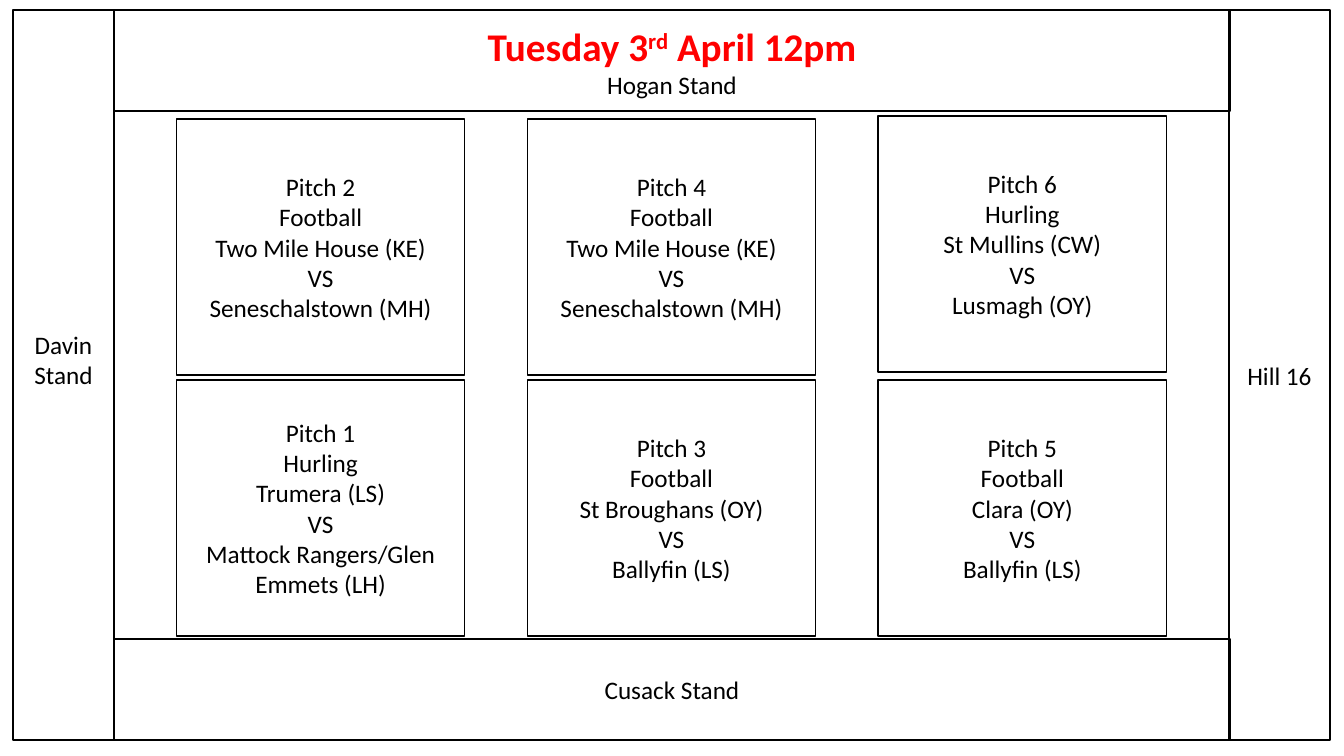
"""Build the pitch plan slide for the Tuesday fixtures."""
import pptx
import pptx.dml.color
import pptx.enum.shapes
import pptx.enum.text
import pptx.util

PX = 9144
COLOURS = {"ink": "000000", "date": "FF0000"}
PITCHES = [
    [
        ["Pitch 2", "Football", "Two Mile House (KE)", "VS", "Seneschalstown (MH)"],
        ["Pitch 4", "Football", "Two Mile House (KE)", "VS", "Seneschalstown (MH)"],
        ["Pitch 6", "Hurling", "St Mullins (CW)", "VS", "Lusmagh (OY)"],
    ],
    [
        ["Pitch 1", "Hurling", "Trumera (LS)", "VS", "Mattock Rangers/Glen Emmets (LH)"],
        ["Pitch 3", "Football", "St Broughans (OY)", "VS", "Ballyfin (LS)"],
        ["Pitch 5", "Football", "Clara (OY)", "VS", "Ballyfin (LS)"],
    ],
]
PITCH_TOPS = [[118, 118, 115], [377, 377, 377]]


class PitchPlan:
    def __init__(self, slide):
        self.slide = slide
        self.font_name = "Calibri"

    def colour(self, name):
        return pptx.dml.color.RGBColor.from_string(COLOURS[name])

    def outline(self, shape):
        shape.fill.background()
        shape.line.color.rgb = self.colour("ink")
        shape.line.width = pptx.util.Pt(1)

    def format_paragraph(self, paragraph, size=18, colour="ink", bold=False):
        paragraph.alignment = pptx.enum.text.PP_ALIGN.CENTER
        paragraph.font.name = self.font_name
        paragraph.font.size = pptx.util.Pt(size)
        paragraph.font.bold = bold
        paragraph.font.color.rgb = self.colour(colour)

    def box(self, left, top, width, height, lines, margin_bottom=5):
        shape = self.slide.shapes.add_shape(
            pptx.enum.shapes.MSO_SHAPE.RECTANGLE,
            left * PX, top * PX, width * PX, height * PX)
        shape.shadow.inherit = False
        self.outline(shape)
        text_frame = shape.text_frame
        text_frame.word_wrap = True
        text_frame.margin_bottom = margin_bottom * PX
        text_frame.vertical_anchor = pptx.enum.text.MSO_ANCHOR.MIDDLE
        text_frame.text = "\n".join(lines)
        for paragraph in text_frame.paragraphs:
            self.format_paragraph(paragraph)

    def title(self, left, top, width, height, date_parts, stand):
        shape = self.slide.shapes.title
        shape.left, shape.top = left * PX, top * PX
        shape.width, shape.height = width * PX, height * PX
        self.outline(shape)
        text_frame = shape.text_frame
        text_frame.auto_size = pptx.enum.text.MSO_AUTO_SIZE.NONE
        text_frame.vertical_anchor = pptx.enum.text.MSO_ANCHOR.MIDDLE
        date = text_frame.paragraphs[0]
        for text, baseline in date_parts:
            run = date.add_run()
            run.text = text
            if baseline:
                run.font._element.set("baseline", str(baseline * 1000))
        self.format_paragraph(date, 28, "date", True)
        stand_name = text_frame.add_paragraph()
        stand_name.text = stand
        self.format_paragraph(stand_name)


def main():
    presentation = pptx.Presentation()
    presentation.slide_width = pptx.util.Inches(13.33)
    presentation.slide_height = pptx.util.Inches(7.5)
    plan = PitchPlan(presentation.slides.add_slide(presentation.slide_layouts[5]))

    plan.box(13, 10, 100, 724, ["Davin Stand"], margin_bottom=35)
    plan.box(1219, 10, 100, 724, ["Hill 16"])
    plan.title(113, 10, 1107, 100,
               [("Tuesday 3", 0), ("rd", 30), (" April 12pm", 0)], "Hogan Stand")
    plan.box(113, 634, 1107, 100, ["Cusack Stand"])
    for pitches, tops in zip(PITCHES, PITCH_TOPS):
        for column, (lines, top) in enumerate(zip(pitches, tops)):
            plan.box(175 + column * 348, top, 286, 254, lines)

    presentation.save("out.pptx")


if __name__ == "__main__":
    main()
